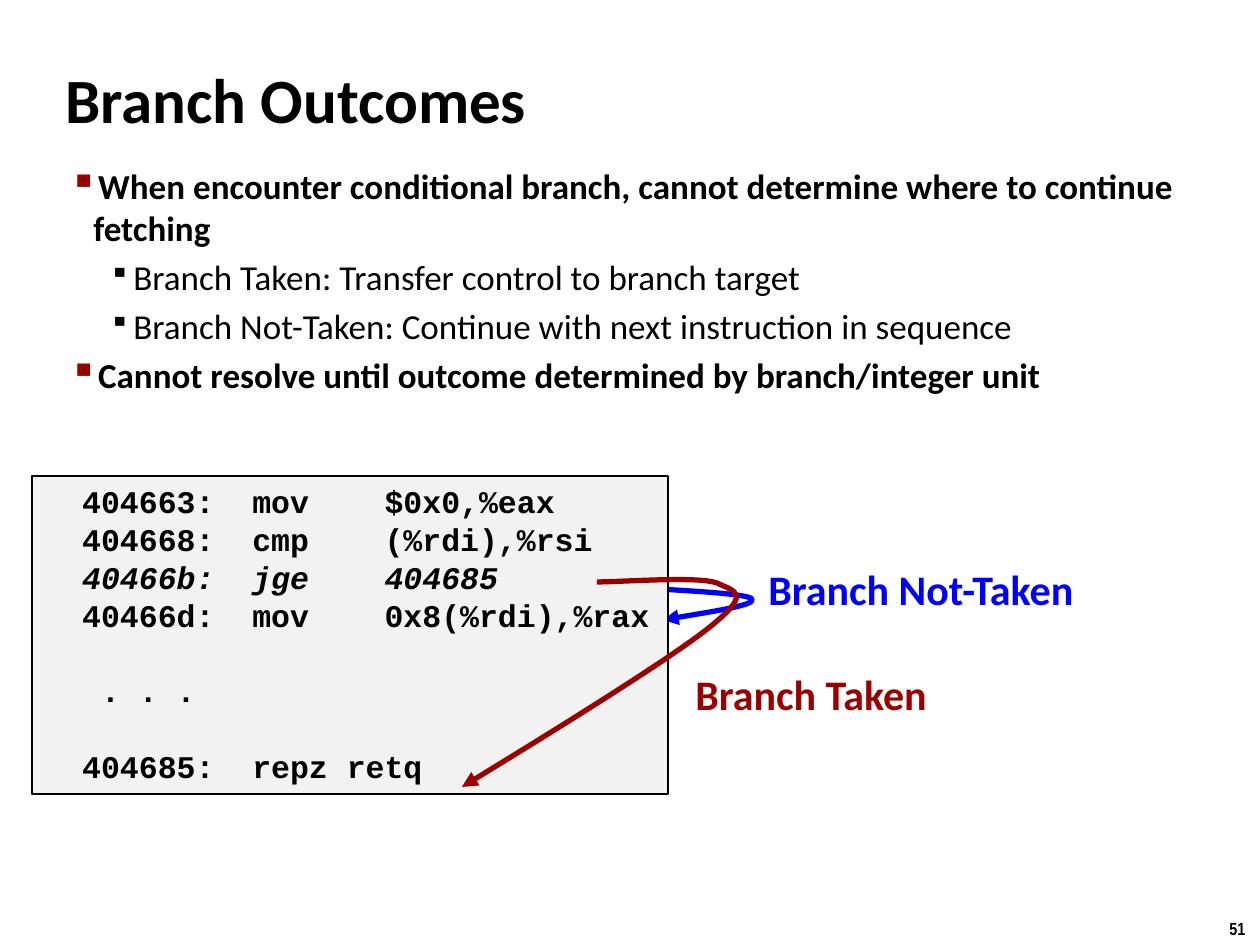
from dataclasses import dataclass

from lxml import etree
from pptx import Presentation
from pptx import util as u
from pptx.dml.color import RGBColor
from pptx.enum import shapes, text
from pptx.oxml.ns import qn

PX = u.Inches(1) / 126
BLACK, RED, BLUE, GREY = "000000", "990000", "0000FF", "F2F2F2"


@dataclass
class Label:
    x: int
    y: int
    w: int
    h: int
    words: str
    size: int
    color: str = BLACK
    face: str = "Calibri"
    wrap: bool = False


@dataclass
class Level:
    left: int
    mark: int
    color: str
    bold: bool


@dataclass
class Curve:
    points: list[tuple[int, int]]
    color: str
    end: str


def px(n: float) -> int:
    return round(n * PX)


def rgb(code: str) -> RGBColor:
    return RGBColor.from_string(code)


def add(parent, tag: str, **attrs):
    return etree.SubElement(parent, qn(tag), attrs)


def style(para, size: int, face: str, color: str, bold: bool = True) -> None:
    font = para.font
    font.size, font.name, font.bold = u.Pt(size), face, bold
    font.color.rgb = rgb(color)


def draw_label(slide, label: Label) -> None:
    box = slide.shapes.add_textbox(px(label.x), px(label.y), px(label.w), px(label.h))
    frame = box.text_frame
    frame.word_wrap = label.wrap
    frame.vertical_anchor = text.MSO_ANCHOR.MIDDLE
    para = frame.paragraphs[0]
    para.text = label.words
    style(para, label.size, label.face, label.color)


def draw_list(slide, items: list[tuple[Level, str]]) -> None:
    frame = slide.shapes.add_textbox(px(42), px(158), px(1207), px(252)).text_frame
    frame.word_wrap = True
    for i, (level, words) in enumerate(items):
        para = frame.add_paragraph() if i else frame.paragraphs[0]
        para.text = words
        para.space_before = u.Pt(4)
        props = para._p.get_or_add_pPr()
        props.set("marL", str(px(level.left)))
        props.set("indent", str(px(-24)))
        add(add(props, "a:buClr"), "a:srgbClr", val=level.color)
        add(props, "a:buSzPct", val=str(level.mark * 1000))
        add(props, "a:buChar", char="▪")
        style(para, 20, "Calibri", BLACK, level.bold)


def draw_code(slide, lines: list[str], slanted: int, spaced: set[int]) -> None:
    box = slide.shapes.add_shape(
        shapes.MSO_SHAPE.RECTANGLE, px(32), px(476), px(636), px(318))
    box.shadow.inherit = False
    box.fill.solid()
    box.fill.fore_color.rgb = rgb(GREY)
    box.line.color.rgb = rgb(BLACK)
    box.line.width = u.Pt(1.5)
    frame = box.text_frame
    frame.word_wrap = False
    frame.vertical_anchor = text.MSO_ANCHOR.TOP
    pitch = u.Pt(21.6)
    for i, line in enumerate(lines):
        para = frame.add_paragraph() if i else frame.paragraphs[0]
        para.text = "\t" + line
        para.alignment = text.PP_ALIGN.LEFT
        para.line_spacing = pitch
        if i in spaced:
            para.space_before = pitch
        # Columns start at these character counts
        tabs = add(para._p.get_or_add_pPr(), "a:tabLst")
        for chars in (2, 11, 18):
            add(tabs, "a:tab", pos=str(u.Inches(0.15 * chars)), algn="l")
        style(para, 18, "Courier New", BLACK)
        para.font.italic = i == slanted


def draw_curve(slide, curve: Curve) -> None:
    start, *rest = curve.points
    pen = slide.shapes.build_freeform(*start, scale=PX)
    pen.add_line_segments(rest, close=False)
    shape = pen.convert_to_shape()
    shape.shadow.inherit = False
    shape.fill.background()
    shape.line.color.rgb = rgb(curve.color)
    shape.line.width = u.Pt(3)
    add(shape.line._get_or_add_ln(), curve.end, type="triangle")
    # Every three points make one cubic segment
    steps = shape._element.xpath(".//a:lnTo")
    outline = steps[0].getparent()
    for i in range(0, len(steps), 3):
        cubic = add(outline, "a:cubicBezTo")
        for step in steps[i:i + 3]:
            cubic.append(step[0])
            outline.remove(step)


TOP = Level(39, 110, RED, True)
SUB = Level(79, 80, BLACK, False)
ITEMS = [
    (TOP, "When encounter conditional branch, cannot determine where to continue fetching"),
    (SUB, "Branch Taken: Transfer control to branch target"),
    (SUB, "Branch Not-Taken: Continue with next instruction in sequence"),
    (TOP, "Cannot resolve until outcome determined by branch/integer unit"),
]
LABELS = [
    Label(1217, 911, 43, 34, "51", 10, face="Arial Narrow"),
    Label(53, 58, 818, 80, "Branch Outcomes", 36, wrap=True),
    Label(683, 662, 260, 63, "Branch Taken", 24, RED),
    Label(756, 557, 343, 63, "Branch Not-Taken", 24, BLUE),
]
CODE = [
    "404663:\tmov\t$0x0,%eax",
    "404668:\tcmp\t(%rdi),%rsi",
    "40466b:\tjge\t404685",
    "40466d:\tmov\t0x8(%rdi),%rax",
    " . . .",
    "404685:\trepz retq",
]
NEXT = Curve([(640, 588), (694, 591), (748, 594), (752, 599),
              (756, 605), (709, 612), (663, 620)], BLUE, "a:tailEnd")
JUMP = Curve([(462, 787), (503, 762), (668, 661), (710, 627),
              (752, 593), (736, 592), (717, 583),
              (698, 576), (622, 582), (597, 582)], RED, "a:headEnd")


def main() -> None:
    deck = Presentation()
    deck.slide_width, deck.slide_height = u.Inches(10), u.Inches(7.5)
    slide = deck.slides.add_slide(deck.slide_layouts[6])
    # Title, labels and bullets
    for label in LABELS:
        draw_label(slide, label)
    draw_list(slide, ITEMS)
    # Code listing between the two branch arrows
    draw_curve(slide, NEXT)
    draw_code(slide, CODE, slanted=2, spaced={4, 5})
    draw_curve(slide, JUMP)
    deck.save("out.pptx")


if __name__ == "__main__":
    main()
